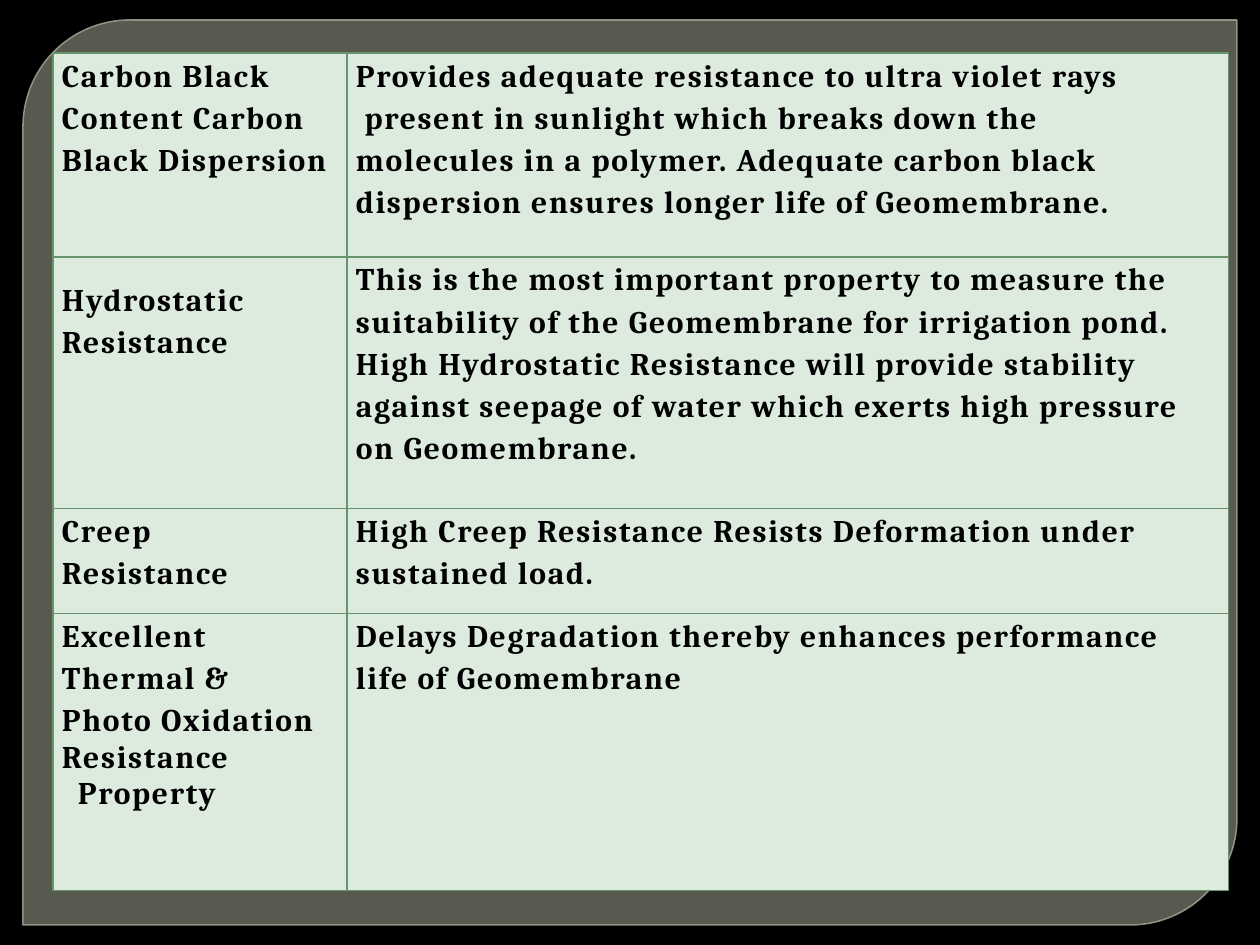
from lxml import etree
from pptx import Presentation
from pptx.dml.color import RGBColor
from pptx.enum.shapes import MSO_SHAPE
from pptx.enum.text import PP_ALIGN
from pptx.oxml.ns import qn
from pptx.util import Pt

PX = 914400 // 126
ROUND_DIAG = MSO_SHAPE.ROUND_2_DIAG_RECTANGLE
JUSTIFY = PP_ALIGN.JUSTIFY
FONT = "Cambria"
LINE_PITCH = Pt(24)
COLS = (294, 882)
ROWS = (
    (204, ["Carbon Black", "Content Carbon", "Black Dispersion"],
     ["Provides adequate resistance to ultra violet rays",
      " present in sunlight which breaks down the",
      "molecules in a polymer. Adequate carbon black",
      "dispersion ensures longer life of Geomembrane."]),
    (252, ["Hydrostatic", "Resistance"],
     ["This is the most important property to measure the",
      "suitability of the Geomembrane for irrigation pond.",
      "High Hydrostatic Resistance will provide stability",
      "against seepage of water which exerts high pressure",
      "on Geomembrane."]),
    (105, ["Creep", "Resistance"],
     ["High Creep Resistance Resists Deformation under",
      "sustained load."]),
    (277, ["Excellent", "Thermal &", "Photo Oxidation", "Resistance Property"],
     ["Delays Degradation thereby enhances performance",
      "life of Geomembrane"]),
)


def px(n):
    return n * PX


def rgb(color):
    return RGBColor.from_string(color)


def set_alpha(fill_parent, percent):
    clr = fill_parent.find(qn("a:solidFill")).find(qn("a:srgbClr"))
    etree.SubElement(clr, qn("a:alpha")).set("val", str(percent * 1000))


def add_panel(s, x, y, w, h):
    sp = s.shapes.add_shape(ROUND_DIAG, px(x), px(y), px(w), px(h))
    sp.shadow.inherit = False
    sp.adjustments[0] = 0.118
    sp.adjustments[1] = 0
    sp.fill.solid()
    sp.fill.fore_color.rgb = rgb("888B7B")
    set_alpha(sp._element.spPr, 65)
    sp.line.color.rgb = rgb("9DA090")
    sp.line.width = Pt(0.87)
    set_alpha(sp._element.spPr.find(qn("a:ln")), 88)


def add_borders(cell, color, width):
    tcPr = cell._tc.get_or_add_tcPr()
    for side in ("lnL", "lnR", "lnT", "lnB"):
        ln = etree.SubElement(tcPr, qn(f"a:{side}"), w=str(width))
        fill = etree.SubElement(ln, qn("a:solidFill"))
        etree.SubElement(fill, qn("a:srgbClr"), val=color)


def fill_cell(cell, lines):
    add_borders(cell, "67946B", Pt(0.75))
    cell.fill.solid()
    cell.fill.fore_color.rgb = rgb("DDEBDF")
    cell.margin_left = cell.margin_right = px(9)
    cell.margin_top = cell.margin_bottom = 0
    tf = cell.text_frame
    for i, line in enumerate(lines):
        p = tf.add_paragraph() if i else tf.paragraphs[0]
        r = p.add_run()
        r.text = line
        r._r.get_or_add_rPr().set("spc", "100")
        p.alignment = JUSTIFY
        p.line_spacing = LINE_PITCH
        p.font.name = FONT
        p.font.size = Pt(18)
        p.font.bold = True
        p.font.color.rgb = rgb("000000")


def add_property_table(s, x, y):
    height = sum(row[0] for row in ROWS)
    table = s.shapes.add_table(len(ROWS), len(COLS), px(x), px(y),
                               px(sum(COLS)), px(height)).table
    table.first_row = table.horz_banding = False
    for col, w in zip(table.columns, COLS):
        col.width = px(w)
    for i, (h, *texts) in enumerate(ROWS):
        table.rows[i].height = px(h)
        for j, lines in enumerate(texts):
            fill_cell(table.cell(i, j), lines)
    table.cell(1, 0).margin_top = Pt(12)
    hanging = table.cell(3, 0).text_frame.paragraphs[-1]
    hanging.line_spacing = 1.0
    pPr = hanging._p.get_or_add_pPr()
    pPr.set("marL", str(px(16)))
    pPr.set("indent", str(-px(16)))


def main():
    prs = Presentation()
    prs.slide_width, prs.slide_height = px(1260), px(945)
    s = prs.slides.add_slide(prs.slide_layouts[6])
    s.background.fill.solid()
    s.background.fill.fore_color.rgb = rgb("000000")
    add_panel(s, 23, 20, 1214, 905)
    add_property_table(s, 53, 53)
    prs.save("out.pptx")


if __name__ == "__main__":
    main()
